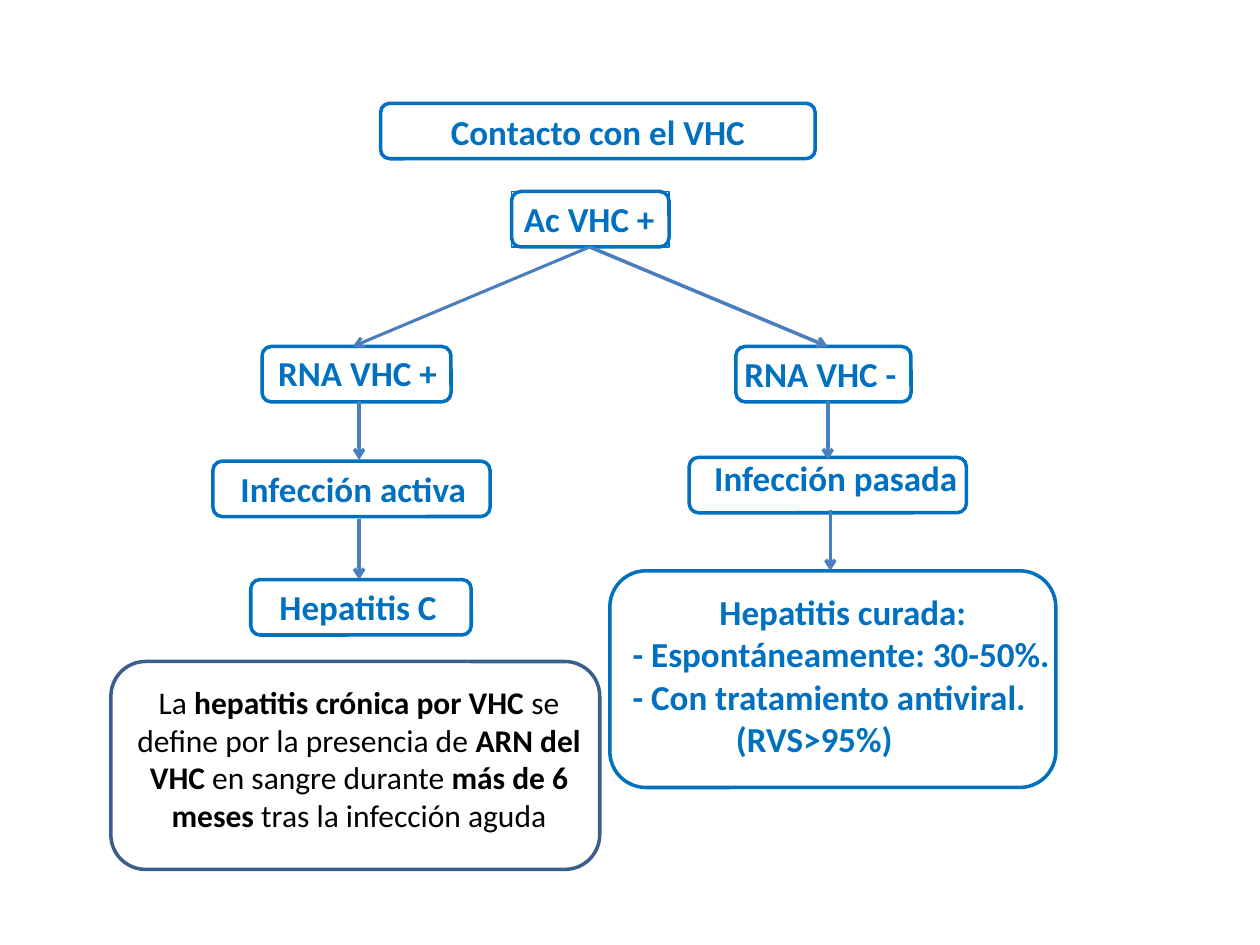
from pptx import Presentation
from pptx.dml.color import RGBColor
from pptx.enum.shapes import MSO_CONNECTOR, MSO_SHAPE
from pptx.enum.text import MSO_ANCHOR, MSO_AUTO_SIZE, PP_ALIGN
from pptx.oxml.ns import qn
from pptx.util import Inches, Pt
from lxml import etree

ROUNDED = MSO_SHAPE.ROUNDED_RECTANGLE
STRAIGHT = MSO_CONNECTOR.STRAIGHT
TOP = MSO_ANCHOR.TOP
CENTER, LEFT = PP_ALIGN.CENTER, PP_ALIGN.LEFT
FIXED = MSO_AUTO_SIZE.NONE

COLORS = {"blue": "0070C0", "arrow": "4B7EBC", "navy": "3A5F8C", "text": "000000"}
WIDTH, HEIGHT = Inches(10), Inches(7.5)
COLUMN, ROW = WIDTH / 100, HEIGHT / 75
NODE_ROWS = 4.4


def color(name):
    return RGBColor.from_string(COLORS[name])


def grid(columns, rows):
    return round(columns * COLUMN), round(rows * ROW)


def place(shape, left, top, width, height):
    shape.left, shape.top = grid(left, top)
    shape.width, shape.height = grid(width, height)


def outline(shape, name="blue", weight=2):
    shape.line.color.rgb = color(name)
    shape.line.width = Pt(weight)


def add_frame(page, left, top, width, height=NODE_ROWS, name="blue"):
    frame = page.shapes.add_shape(ROUNDED, *grid(left, top), *grid(width, height))
    frame.shadow.inherit = False
    frame.fill.background()
    outline(frame, name)


def style(para, size=20, name="blue", bold=True):
    font = para.font
    font.name, font.size, font.bold = "Calibri", Pt(size), bold
    font.color.rgb = color(name)


def add_label(page, text, left, top, width):
    box = page.shapes.add_textbox(*grid(left, top), *grid(width, NODE_ROWS))
    box.text_frame.word_wrap = False
    para = box.text_frame.paragraphs[0]
    para.text = text
    style(para)
    return box


def add_arrow(page, start, end, weight=2):
    arrow = page.shapes.add_connector(STRAIGHT, *grid(*start), *grid(*end))
    outline(arrow, "arrow", weight)
    properties = arrow._element.spPr
    etree.SubElement(properties.get_or_add_ln(), qn("a:tailEnd"), type="arrow")
    etree.SubElement(properties, qn("a:effectLst"))


def fill_title(page, text):
    title = page.shapes.title
    place(title, 34.7, 8.2, 25.5, NODE_ROWS)
    title.text_frame.auto_size = FIXED
    title.text_frame.word_wrap = False
    title.text_frame.text = text
    style(title.text_frame.paragraphs[0])


def fill_outcomes(page, lines):
    body = page.placeholders[1]
    place(body, 49.2, 46.4, 35.4, 17.8)
    frame = body.text_frame
    frame.auto_size, frame.vertical_anchor = FIXED, TOP
    frame.word_wrap = False
    frame.text = "\n".join(text for text, _, _ in lines)
    for para, (_, align, indent) in zip(frame.paragraphs, lines):
        para.alignment = align
        para.space_before = Pt(0)
        style(para)
        properties = para._p.get_or_add_pPr()
        properties.set("marL", str(round(indent * COLUMN)))
        properties.set("indent", "0")
        etree.SubElement(properties, qn("a:buNone"))
        properties.append(properties.find(qn("a:defRPr")))


def add_definition(page, spans):
    box = page.shapes.add_textbox(*grid(8.7, 53.7), *grid(39.6, 13.1))
    box.text_frame.word_wrap = True
    para = box.text_frame.paragraphs[0]
    para.alignment = CENTER
    style(para, 18, "text", False)
    for text, bold in spans:
        span = para.add_run()
        span.text = text
        span.font.bold = bold


def main():
    deck = Presentation()
    deck.slide_width, deck.slide_height = WIDTH, HEIGHT
    page = deck.slides.add_slide(deck.slide_layouts[1])

    fill_title(page, "Contacto con el VHC")
    fill_outcomes(page, [
        ("Hepatitis curada:", CENTER, 0),
        ("- Espontáneamente: 30-50%.", LEFT, 0),
        ("- Con tratamiento antiviral.", LEFT, 0),
        ("(RVS>95%)", LEFT, 8.2),
    ])

    for left, top, width in [
        (30.2, 8.2, 34.5), (40.6, 15.2, 12.5),
        (20.8, 27.5, 15), (58.4, 27.5, 13.9),
        (16.9, 36.6, 22), (54.7, 36.3, 22), (19.9, 46, 17.5),
    ]:
        add_frame(page, left, top, width)
    add_frame(page, 48.4, 45.3, 35.4, 17.2)
    add_frame(page, 8.8, 52.5, 38.8, 16.5, "navy")

    antibody = add_label(page, "Ac VHC +", 40.6, 15.2, 12.5)
    outline(antibody, weight=0.75)
    for text, left, top, width in [
        ("RNA VHC +", 21.1, 27.4, 14.7),
        ("RNA VHC -", 58.1, 27.5, 14.2),
        ("Infección activa", 18.1, 36.6, 20.1),
        ("Infección pasada", 55.7, 35.7, 21.5),
        ("Hepatitis C", 21.2, 46, 14.6),
    ]:
        add_label(page, text, left, top, width)

    fork = (46.8, 19.6)
    add_arrow(page, fork, (28, 27.5), 1.75)
    add_arrow(page, fork, (65.7, 27.5))
    for column, top, bottom in [
        (28.5, 31.8, 36.5), (65.7, 31.8, 36.5),
        (28.5, 41.2, 46), (65.9, 40.5, 45.3),
    ]:
        add_arrow(page, (column, top), (column, bottom))

    add_definition(page, [
        ("La ", False),
        ("hepatitis crónica por VHC ", True),
        ("se define por la presencia de ", False),
        ("ARN del VHC ", True),
        ("en sangre durante ", False),
        ("más de 6 meses", True),
        (" tras la infección aguda", False),
    ])
    deck.save("out.pptx")


if __name__ == "__main__":
    main()
